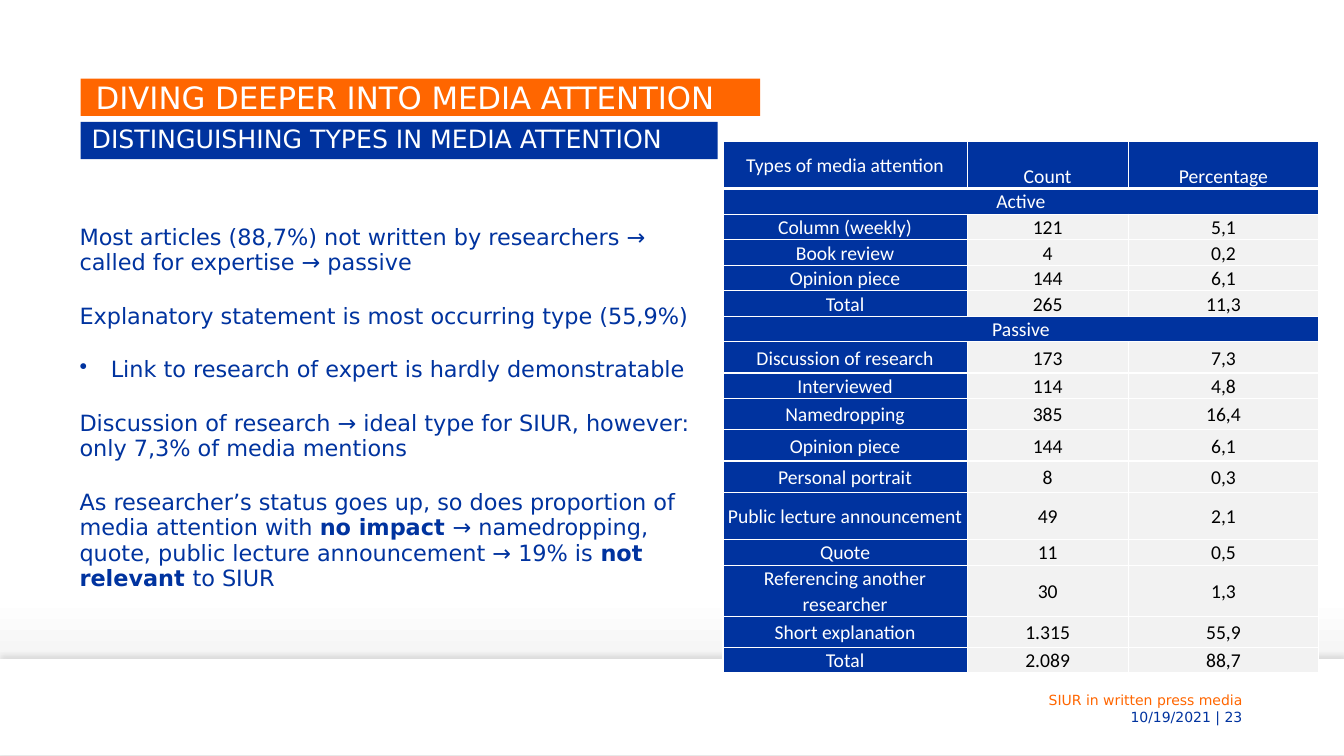
from lxml import etree
from pptx import Presentation
from pptx.dml.color import RGBColor
from pptx.enum.shapes import MSO_SHAPE as Shape
from pptx.enum.text import MSO_ANCHOR as Anchor, MSO_AUTO_SIZE as AutoSize, PP_ALIGN as Align
from pptx.oxml import parse_xml
from pptx.oxml.ns import nsdecls, qn
from pptx.util import Inches, Pt

BLUE = RGBColor(0x00, 0x33, 0x9F)
ORANGE = RGBColor(0xFF, 0x66, 0x00)
WHITE = RGBColor(0xFF, 0xFF, 0xFF)
BLACK = RGBColor(0x00, 0x00, 0x00)
PALE_GREY = RGBColor(0xF2, 0xF2, 0xF2)
SHADE_GREY = RGBColor(0xED, 0xED, 0xED)

presentation = Presentation()
presentation.slide_width = Inches(13.33)
presentation.slide_height = Inches(7.5)
slide = presentation.slides.add_slide(presentation.slide_layouts[5])


def place(left, top, width, height):
    """Turn percentages of the slide's size into lengths."""
    across, down = presentation.slide_width / 100, presentation.slide_height / 100
    return int(left * across), int(top * down), int(width * across), int(height * down)


def write(frame, *texts, size, color, font="DejaVu Sans", align=Align.LEFT,
          anchor=Anchor.MIDDLE, margins=(0, 0, 0, 0), spacing=1.0, gap=0, indent=0):
    """Fill a frame; **words** are bold and a leading • makes a bullet."""
    frame.word_wrap = True
    frame.auto_size = AutoSize.NONE
    frame.vertical_anchor = anchor
    (frame.margin_left, frame.margin_top,
     frame.margin_right, frame.margin_bottom) = [Inches(margin) for margin in margins]
    for number, text in enumerate(texts):
        paragraph = frame.add_paragraph() if number else frame.paragraphs[0]
        paragraph.alignment = align
        paragraph.line_spacing = spacing
        paragraph.space_before = Pt(gap if number else 0)
        paragraph.space_after = Pt(gap)
        properties = paragraph._p.get_or_add_pPr()
        properties.set("marL", str(Inches(indent)))
        properties.set("indent", "0")
        if text.startswith("•"):
            text = text[1:]
            properties.set("marL", str(Inches(0.31)))
            properties.set("indent", str(Inches(-0.31)))
            etree.SubElement(properties, qn("a:buChar")).set("char", "•")
        for part, words in enumerate(text.split("**")):
            run = paragraph.add_run()
            run.text = words
            run.font.name = font
            run.font.size = Pt(size)
            run.font.bold = part % 2 == 1
            run.font.color.rgb = color


# Background and footer
background = slide.background.fill
background.gradient()
background.gradient_angle = 270
for stop, color, position in zip(background.gradient_stops, (WHITE, SHADE_GREY), (0.79, 0.92)):
    stop.color.rgb = color
    stop.position = position

footer_bar = slide.shapes.add_shape(Shape.RECTANGLE, *place(0, 87.2, 100, 12.67))
footer_bar.fill.solid()
footer_bar.fill.fore_color.rgb = WHITE
footer_bar.line.fill.background()
footer_bar._element.spPr.append(parse_xml(
    f'<a:effectLst {nsdecls("a")}><a:outerShdw blurRad="{Pt(4)}" dist="{Pt(3)}" dir="16200000">'
    '<a:srgbClr val="000000"><a:alpha val="10000"/></a:srgbClr></a:outerShdw></a:effectLst>'))

for text, color, top in (("SIUR in written press media", ORANGE, 91.33),
                         ("10/19/2021 | 23", BLUE, 93.6)):
    footer = slide.shapes.add_textbox(*place(70.67, top, 22.5, 2.4))
    write(footer.text_frame, text, size=10, color=color, align=Align.RIGHT,
          margins=(0.1, 0, 0.1, 0))

# Title and subtitle
title = slide.shapes.title
title.left, title.top, title.width, title.height = place(6, 10.4, 50.56, 4.93)
title.fill.solid()
title.fill.fore_color.rgb = ORANGE
write(title.text_frame, "DIVING DEEPER INTO MEDIA ATTENTION", size=22, color=WHITE,
      anchor=Anchor.BOTTOM, margins=(0, 0.04, 0.16, 0), spacing=0.9, indent=0.15)

subtitle = slide.shapes.add_textbox(*place(6, 16.13, 47.41, 4.93))
subtitle.fill.solid()
subtitle.fill.fore_color.rgb = BLUE
write(subtitle.text_frame, "DISTINGUISHING TYPES IN MEDIA ATTENTION", size=18, color=WHITE,
      anchor=Anchor.TOP, margins=(0, 0.04, 0.1, 0.04), spacing=0.95, indent=0.11)

# Findings
findings = slide.shapes.add_textbox(*place(5.18, 29.07, 48.54, 50.53))
write(findings.text_frame,
      "Most articles (88,7%) not written by researchers → called for expertise → passive",
      "Explanatory statement is most occurring type (55,9%)",
      "•Link to research of expert is hardly demonstratable",
      "Discussion of research → ideal type for SIUR, however: only 7,3% of media mentions",
      "As researcher’s status goes up, so does proportion of media attention with "
      "**no impact **→ namedropping, quote, public lecture announcement → 19% is "
      "**not relevant **to SIUR",
      size=16, color=BLUE, anchor=Anchor.TOP, margins=(0.1, 0.05, 0.1, 0.05),
      spacing=0.95, gap=10)

# Table of media attention, with row heights as percentages of the slide
LOW, MEDIUM, TALL = 2.93, 4.13, 6.27
media_rows = [
    (TALL, "Types of media attention", "Count", "Percentage"),
    (LOW, "Active"),
    (LOW, "Column (weekly)", "121", "5,1"),
    (LOW, "Book review", "4", "0,2"),
    (LOW, "Opinion piece", "144", "6,1"),
    (LOW, "Total", "265", "11,3"),
    (LOW, "Passive"),
    (MEDIUM, "Discussion of research", "173", "7,3"),
    (LOW, "Interviewed", "114", "4,8"),
    (MEDIUM, "Namedropping", "385", "16,4"),
    (MEDIUM, "Opinion piece", "144", "6,1"),
    (MEDIUM, "Personal portrait", "8", "0,3"),
    (TALL, "Public lecture announcement", "49", "2,1"),
    (LOW, "Quote", "11", "0,5"),
    (TALL, "Referencing another researcher", "30", "1,3"),
    (MEDIUM, "Short explanation", "1.315", "55,9"),
    (LOW, "Total", "2.089", "88,7"),
]
table_area = place(53.79, 18.67, 44.34, sum(row[0] for row in media_rows))
table = slide.shapes.add_table(len(media_rows), 3, *table_area).table
for column, share in zip(table.columns, (0.41, 0.27, 0.32)):
    column.width = int(table_area[2] * share)

for row_number, (height, *texts) in enumerate(media_rows):
    table.rows[row_number].height = int(presentation.slide_height * height / 100)
    if len(texts) == 1:
        table.cell(row_number, 0).merge(table.cell(row_number, 2))
    for column_number in range(3):
        cell = table.cell(row_number, column_number)
        is_header = row_number == 0
        is_blue = is_header or column_number == 0 or len(texts) == 1
        for side in "LRTB":
            thick = (is_header and side == "B") or (row_number == 1 and side == "T")
            cell._tc.get_or_add_tcPr().append(parse_xml(
                f'<a:ln{side} {nsdecls("a")} w="{Pt(3 if thick else 1)}"><a:solidFill>'
                f'<a:srgbClr val="{WHITE}"/></a:solidFill></a:ln{side}>'))
        cell.fill.solid()
        cell.fill.fore_color.rgb = BLUE if is_blue else PALE_GREY
        if column_number < len(texts):
            anchor = Anchor.BOTTOM if is_header and column_number else Anchor.MIDDLE
            write(cell.text_frame, texts[column_number], size=14, font="Calibri",
                  color=WHITE if is_blue else BLACK, align=Align.CENTER, spacing=1.07)
            cell.vertical_anchor = anchor
            cell.margin_left = cell.margin_right = Inches(0.04)
            cell.margin_top = cell.margin_bottom = 0

# Cell text frames take their layout from the cell itself
presentation.save("out.pptx")
